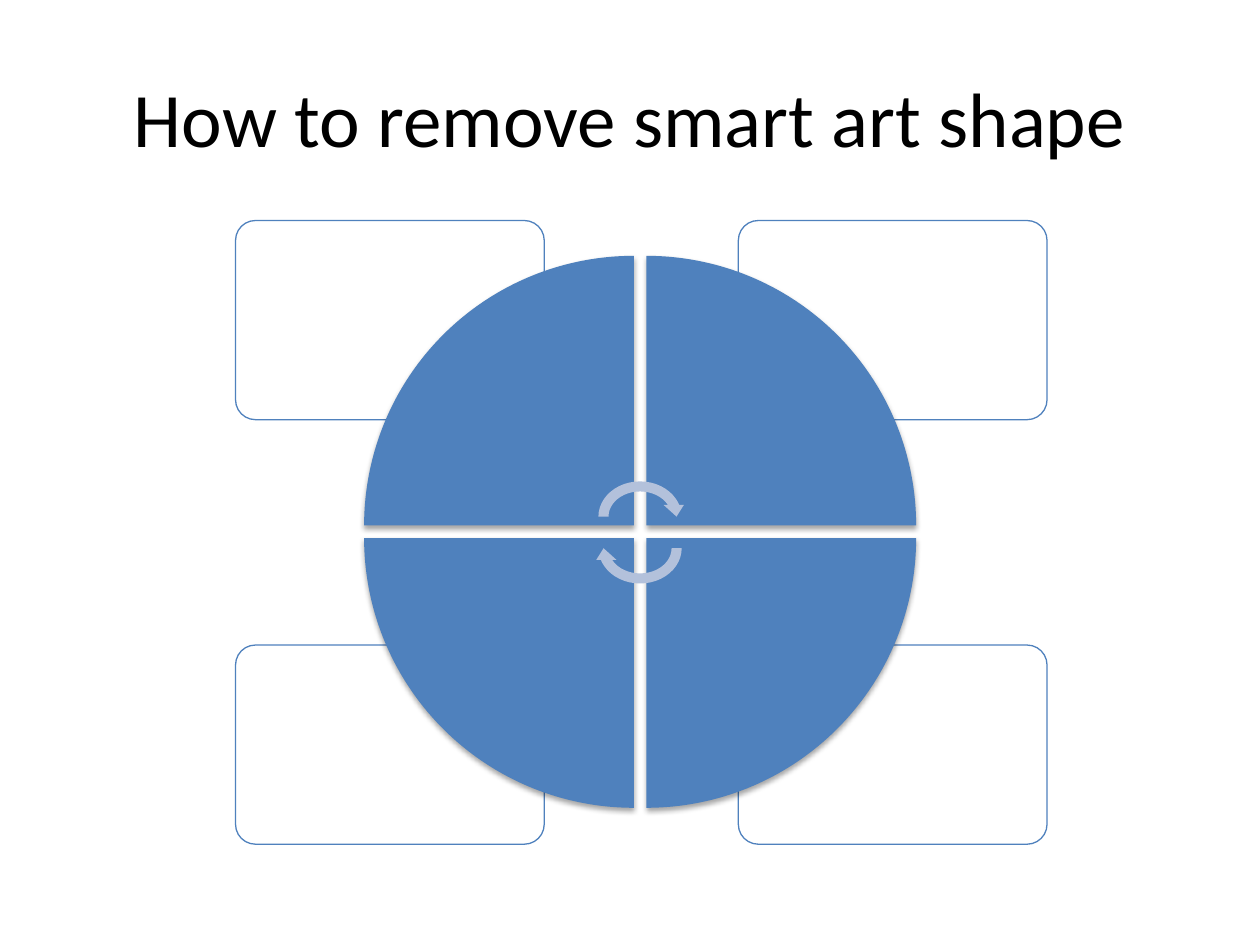
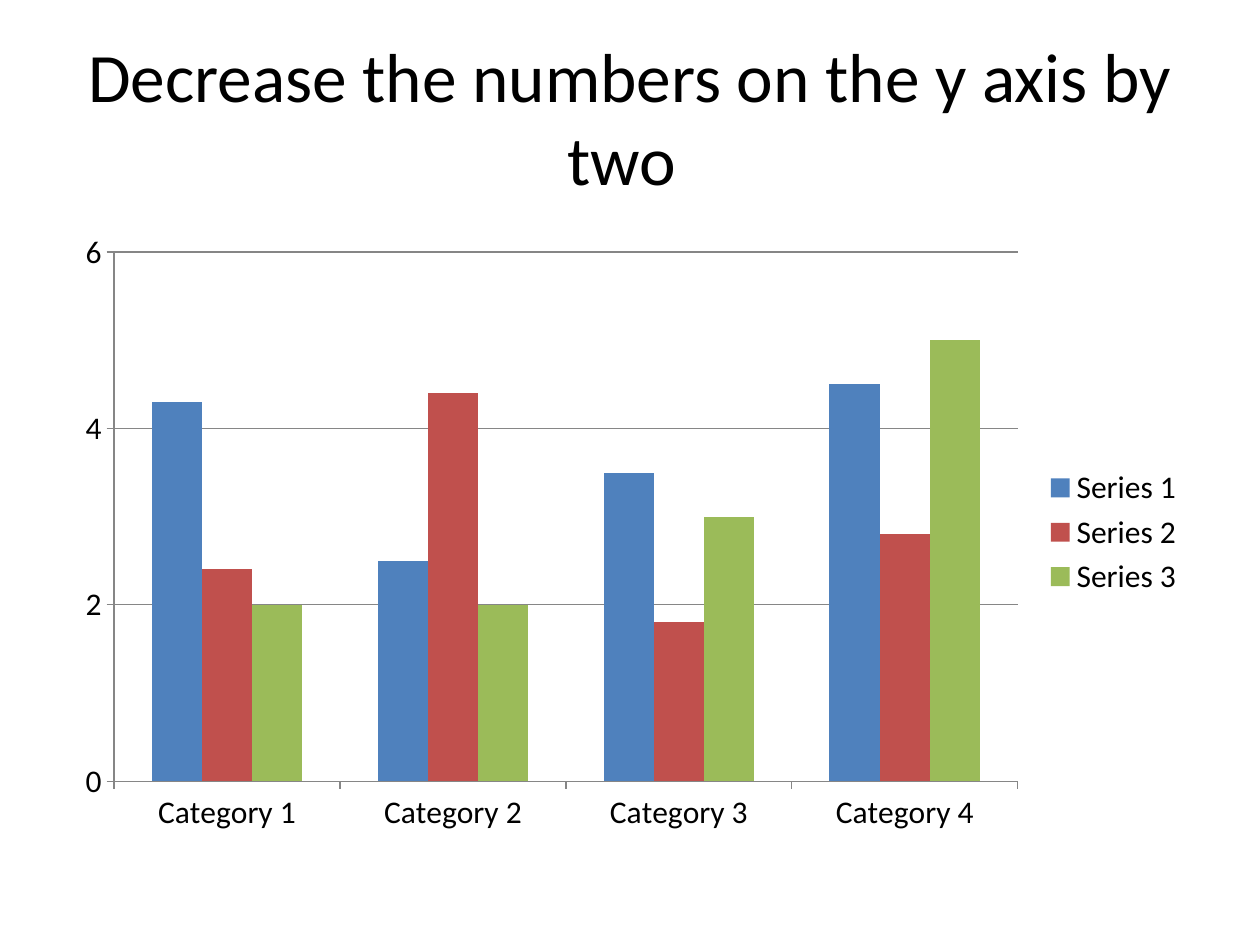
from lxml import etree
from pptx import Presentation
from pptx.chart import data
from pptx.dml.color import RGBColor
from pptx.enum import chart as ch, shapes, text
from pptx.oxml import ns
from pptx.util import Pt

BLACK = RGBColor(0x00, 0x00, 0x00)
WHITE = RGBColor(0xFF, 0xFF, 0xFF)
BLUE = RGBColor(0x4F, 0x81, 0xBD)
RED = RGBColor(0xC0, 0x50, 0x4D)
GREEN = RGBColor(0x9B, 0xBB, 0x59)
PALE_BLUE = RGBColor(0xB3, 0xC1, 0xDB)
GRAY = RGBColor(0x86, 0x86, 0x86)
FONT = "Calibri"

prs = Presentation()
prs.slide_width, prs.slide_height = Pt(720), Pt(540)


def add_titled_slide(words, size):
    slide = prs.slides.add_slide(prs.slide_layouts.get_by_name("Title Only"))
    title = slide.shapes.title
    title.left, title.top, title.width, title.height = Pt(36), Pt(21.6), Pt(648), Pt(90)
    frame = title.text_frame
    frame.word_wrap = True
    frame.auto_size = text.MSO_AUTO_SIZE.NONE
    frame.vertical_anchor = text.MSO_ANCHOR.MIDDLE
    paragraph = frame.paragraphs[0]
    paragraph.alignment = text.PP_ALIGN.CENTER
    run = paragraph.add_run()
    run.text = words
    run.font.name, run.font.size = FONT, Pt(size)
    run.font.color.rgb = BLACK
    return slide


def add_part(slide, kind, left, top, width, height, color, turn=0):
    part = slide.shapes.add_shape(kind, Pt(left), Pt(top), Pt(width), Pt(height))
    part.rotation = turn
    part.shadow.inherit = False
    part.fill.solid()
    part.fill.fore_color.rgb = color
    part.line.fill.background()
    return part


# Slide 1: cycle of four quarters
cycle = add_titled_slide("How to remove smart art shape", 44)

# Corner cards, slightly transparent
for top in (368.6, 126):
    for left in (421.9, 134.6):
        card = add_part(cycle, shapes.MSO_SHAPE.ROUNDED_RECTANGLE, left, top, 176.4, 113.8, WHITE)
        card.adjustments[0] = 0.1
        card.line.color.rgb = BLUE
        card.line.width = Pt(0.75)
        card_color = card.fill._xPr.find(".//" + ns.qn("a:srgbClr"))
        etree.SubElement(card_color, ns.qn("a:alpha"), val="90000")

# Quarters, clockwise from top left, each with a soft shadow below
QUARTER, PITCH = 154.1, 161.3
for step, (column, row) in enumerate([(0, 0), (1, 0), (1, 1), (0, 1)]):
    quarter = add_part(cycle, shapes.MSO_SHAPE.PIE_WEDGE, 208.1 + column * PITCH,
                       146.2 + row * PITCH, QUARTER, QUARTER, BLUE, step * 90)
    effects = quarter._element.spPr.find(ns.qn("a:effectLst"))
    shadow = etree.SubElement(effects, ns.qn("a:outerShdw"), blurRad=str(Pt(3.1)),
                              dist=str(Pt(1.8)), dir="5400000", rotWithShape="0")
    shadow_color = etree.SubElement(shadow, ns.qn("a:srgbClr"), val=str(BLACK))
    etree.SubElement(shadow_color, ns.qn("a:alpha"), val="35000")

# Arrows around the centre
for top, turn in ((272.2, 0), (290.2, 180)):
    add_part(cycle, shapes.MSO_SHAPE.CIRCULAR_ARROW, 339.1, top, 53.3, 46.1, PALE_BLUE, turn)

# Slide 2: column chart
columns = add_titled_slide("Decrease the numbers on the y axis by two ", 39.6)
SERIES = [
    ("Series 1", (4.3, 2.5, 3.5, 4.5), BLUE),
    ("Series 2", (2.4, 4.4, 1.8, 2.8), RED),
    ("Series 3", (2, 2, 3, 5), GREEN),
]
numbers = data.CategoryChartData()
numbers.categories = [f"Category {n}" for n in range(1, 5)]
for name, values, _ in SERIES:
    numbers.add_series(name, values)
chart = columns.shapes.add_chart(ch.XL_CHART_TYPE.COLUMN_CLUSTERED, Pt(36), Pt(126),
                                 Pt(648), Pt(356.4), numbers).chart
chart.has_title = False
chart.font.name, chart.font.size = FONT, Pt(18)
chart.font.color.rgb = BLACK
chart.has_legend = True
chart.legend.position = ch.XL_LEGEND_POSITION.RIGHT
chart.legend.include_in_layout = False

plot = chart.plots[0]
plot.gap_width, plot.overlap = 150, 0
plot.vary_by_categories = False
for series, (_, _, color) in zip(plot.series, SERIES):
    series.invert_if_negative = False
    series.format.fill.solid()
    series.format.fill.fore_color.rgb = color

# Axes: the value axis counts by two
for axis in (chart.category_axis, chart.value_axis):
    axis.major_tick_mark = ch.XL_TICK_MARK.OUTSIDE
    axis.minor_tick_mark = ch.XL_TICK_MARK.NONE
    axis.format.line.color.rgb = GRAY
    axis.format.line.width = Pt(0.75)
value_axis = chart.value_axis
value_axis.minimum_scale, value_axis.maximum_scale, value_axis.major_unit = 0, 6, 2
value_axis.has_major_gridlines = True
value_axis.major_gridlines.format.line.color.rgb = GRAY
value_axis.major_gridlines.format.line.width = Pt(0.75)

prs.save("out.pptx")
